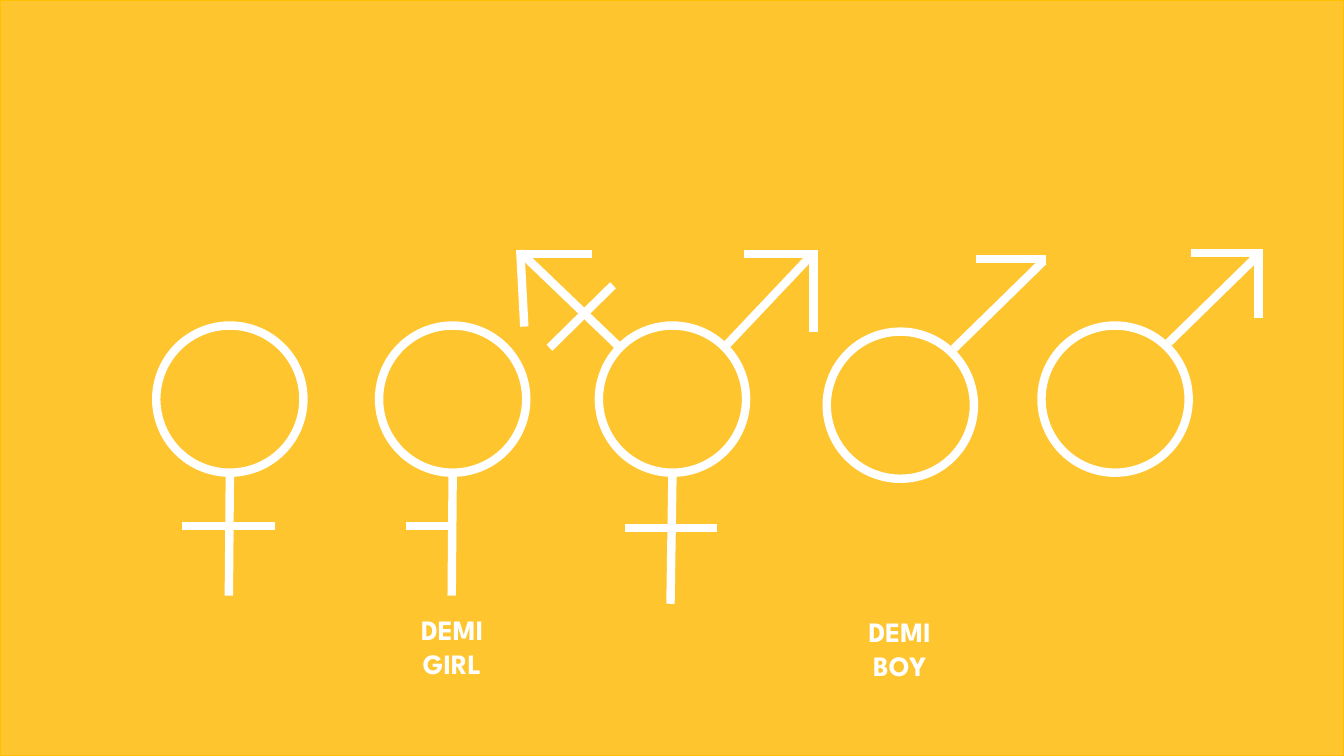
from pptx import Presentation
from pptx.dml.color import RGBColor
from pptx.enum.shapes import MSO_CONNECTOR, MSO_SHAPE
from pptx.enum.text import MSO_AUTO_SIZE, PP_ALIGN
from pptx.util import Inches, Pt
from lxml import etree

STRAIGHT = MSO_CONNECTOR.STRAIGHT
RECTANGLE, OVAL = MSO_SHAPE.RECTANGLE, MSO_SHAPE.OVAL
CENTER = PP_ALIGN.CENTER
GROW = MSO_AUTO_SIZE.SHAPE_TO_FIT_TEXT

# Content: strokes are (x1, y1, x2, y2) from the centre of the circle
YELLOW, EDGE, WHITE = "FEC52E", "FFC000", "FFFFFF"
FONT = "League Spartan"
WIDTH, HEIGHT = 13.33, 7.5
DIAMETER, STROKE = 1.46, 6

STEM = (-0.01, 1.95, 0, 0.73)
CROSSBAR = (0.45, 1.26, -0.47, 1.26)
HALF_CROSSBAR = (-0.01, 1.26, -0.46, 1.26)
SHAFT = (1.42, -1.43, 0.53, -0.56)
BARB_TOP = (1.44, -1.45, 0.75, -1.45)
BARB_SIDE = (1.42, -1.49, 1.42, -0.81)
COMBINED = [
    (-0.02, 2.03, 0, 0.73), (0.44, 1.28, -0.47, 1.28),  # cross below
    (-0.52, -0.51, -1.49, -1.44), (-0.59, -1.13, -1.22, -0.51),  # struck arrow
    (-0.8, -1.44, -1.49, -1.44), (-1.51, -1.48, -1.47, -0.72),
    (1.38, -1.43, 0.51, -0.51),  # right arrow
    (1.4, -1.44, 0.71, -1.44), (1.4, -1.48, 1.4, -0.67),
]

# Centre x, centre y, strokes
SYMBOLS = [
    (2.28, 3.96, [STEM, CROSSBAR]),
    (4.49, 3.96, [STEM, HALF_CROSSBAR]),
    (6.67, 3.96, COMBINED),
    (8.93, 4.02, [SHAFT, BARB_TOP]),
    (11.06, 3.96, [SHAFT, BARB_TOP, BARB_SIDE]),
]

# Left, top, lines
LABELS = [
    (3.85, 6.03, ["DEMI", "GIRL"]),
    (8.29, 6.05, ["DEMI", "BOY"]),
]
LABEL_SIZE = (1.27, 0.77)


def color(value):
    return RGBColor.from_string(value)


def add_outlined(kind, box, line, weight, fill=None):
    shape = slide.shapes.add_shape(kind, *map(Inches, box))
    shape.shadow.inherit = False
    if fill:
        shape.fill.solid()
        shape.fill.fore_color.rgb = color(fill)
    else:
        shape.fill.background()
    shape.line.color.rgb = color(line)
    shape.line.width = Pt(weight)


def add_stroke(x1, y1, x2, y2):
    stroke = slide.shapes.add_connector(STRAIGHT, *map(Inches, (x1, y1, x2, y2)))
    stroke.line.color.rgb = color(WHITE)
    stroke.line.width = Pt(STROKE)
    properties = stroke.line._get_or_add_ln().getparent()
    etree.SubElement(
        properties, "{http://schemas.openxmlformats.org/drawingml/2006/main}effectLst")


def add_label(left, top, lines):
    frame = slide.shapes.add_textbox(
        *map(Inches, (left, top, *LABEL_SIZE))).text_frame
    frame.word_wrap = True
    frame.auto_size = GROW
    frame.text = "\n".join(lines)
    for paragraph in frame.paragraphs:
        paragraph.alignment = CENTER
        paragraph.font.name = FONT
        paragraph.font.size = Pt(20)
        paragraph.font.bold = True
        paragraph.font.color.rgb = color(WHITE)


deck = Presentation()
deck.slide_width, deck.slide_height = Inches(WIDTH), Inches(HEIGHT)
slide = deck.slides.add_slide(deck.slide_layouts[6])

# Backdrop
add_outlined(RECTANGLE, (0, 0, WIDTH, HEIGHT), EDGE, 1, YELLOW)

# Symbols
for x, y, strokes in SYMBOLS:
    radius = DIAMETER / 2
    add_outlined(OVAL, (x - radius, y - radius, DIAMETER, DIAMETER), WHITE, STROKE)
    for x1, y1, x2, y2 in strokes:
        add_stroke(x + x1, y + y1, x + x2, y + y2)

# Labels
for label in LABELS:
    add_label(*label)

deck.save("out.pptx")
